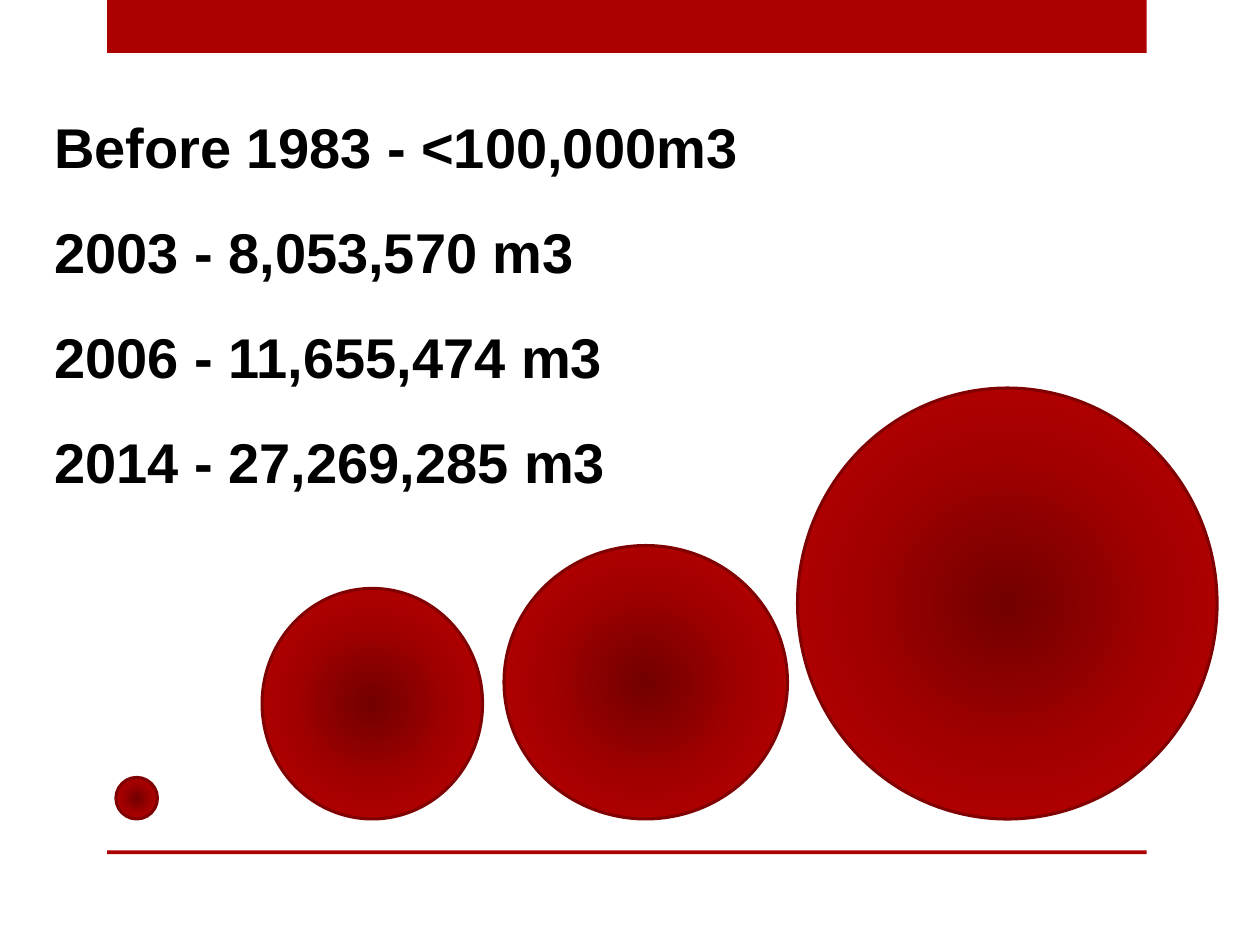
from typing import NamedTuple

from lxml.etree import SubElement
from pptx import Presentation
from pptx.dml.color import RGBColor
from pptx.enum.shapes import MSO_SHAPE as Shape
from pptx.enum.text import MSO_ANCHOR, MSO_AUTO_SIZE
from pptx.oxml import parse_xml
from pptx.oxml.ns import nsdecls, qn
from pptx.util import Inches, Pt

COLORS = {
    "bar": "AD0101",
    "outline": "800101",
    "core": "720000",
    "middle": "A20000",
    "rim": "C00000",
    "text": "000000",
}
GRADIENT = {0: "core", 50: "middle", 100: "rim"}
BASELINE = 6.5


class Bar(NamedTuple):
    top: float
    height: float


class Bubble(NamedTuple):
    left: float
    width: float
    height: float


BARS = [Bar(0, 0.42), Bar(6.75, 0.03)]
BUBBLES = [
    Bubble(2.08, 1.75, 1.83),
    Bubble(4, 2.25, 2.17),
    Bubble(0.92, 0.33, 0.33),
    Bubble(6.33, 3.33, 3.42),
]
VOLUMES = [
    "Before 1983 - <100,000m3",
    "2003 - 8,053,570 m3",
    "2006 - 11,655,474 m3",
    "2014 - 27,269,285 m3",
]
FRAME_FORMAT = {
    "word_wrap": True,
    "auto_size": MSO_AUTO_SIZE.NONE,
    "vertical_anchor": MSO_ANCHOR.TOP,
}
PARAGRAPH_FORMAT = {
    "line_spacing": 1.5,
    "space_before": Pt(2.25),
    "space_after": Pt(0),
}
FONT_FORMAT = {"name": "Arial", "size": Pt(32), "bold": True}


def rgb(name: str) -> RGBColor:
    return RGBColor.from_string(COLORS[name])


def apply(target, values: dict) -> None:
    for name, value in values.items():
        setattr(target, name, value)


def place(sp, left: float, top: float, width: float, height: float) -> None:
    apply(sp, {
        "left": Inches(left),
        "top": Inches(top),
        "width": Inches(width),
        "height": Inches(height),
    })


def add_bar(slide, bar: Bar) -> None:
    sp = slide.shapes.add_shape(Shape.RECTANGLE, 0, 0, 0, 0)
    place(sp, 0.85, bar.top, 8.25, bar.height)
    sp.shadow.inherit = False
    sp.fill.solid()
    sp.fill.fore_color.rgb = rgb("bar")
    sp.line.fill.background()


def add_bubble(slide, bubble: Bubble) -> None:
    sp = slide.shapes.add_shape(Shape.OVAL, 0, 0, 0, 0)
    place(sp, bubble.left, BASELINE - bubble.height, bubble.width, bubble.height)
    sp.shadow.inherit = False
    sp.line.color.rgb = rgb("outline")
    sp.line.width = Pt(1.75)
    stops = "".join(
        f'<a:gs pos="{pos * 1000}"><a:srgbClr val="{COLORS[name]}"/></a:gs>'
        for pos, name in GRADIENT.items()
    )
    fill = parse_xml(
        f'<a:gradFill {nsdecls("a")} rotWithShape="1"><a:gsLst>{stops}</a:gsLst>'
        '<a:path path="circle"><a:fillToRect l="50000" t="50000" r="50000" b="50000"/>'
        "</a:path></a:gradFill>"
    )
    sp.element.spPr.find(qn("a:prstGeom")).addnext(fill)


def fill_list(body, lines: list[str]) -> None:
    place(body, 0.33, 0.58, 6.75, 3.83)
    tf = body.text_frame
    apply(tf, FRAME_FORMAT)
    tf.text = "\n".join(lines)
    for p in tf.paragraphs:
        apply(p, PARAGRAPH_FORMAT)
        pPr = p._p.get_or_add_pPr()
        pPr.set("marL", "0")
        pPr.set("indent", "0")
        SubElement(pPr, qn("a:buNone"))
        for r in p.runs:
            apply(r.font, FONT_FORMAT)
            r.font.color.rgb = rgb("text")


def main() -> None:
    prs = Presentation()
    prs.slide_width, prs.slide_height = Inches(10), Inches(7.5)
    slide = prs.slides.add_slide(prs.slide_layouts[1])
    title = slide.shapes.title.element
    title.getparent().remove(title)
    for bar in BARS:
        add_bar(slide, bar)
    fill_list(slide.placeholders[1], VOLUMES)
    for bubble in BUBBLES:
        add_bubble(slide, bubble)
    prs.save("out.pptx")


if __name__ == "__main__":
    main()
